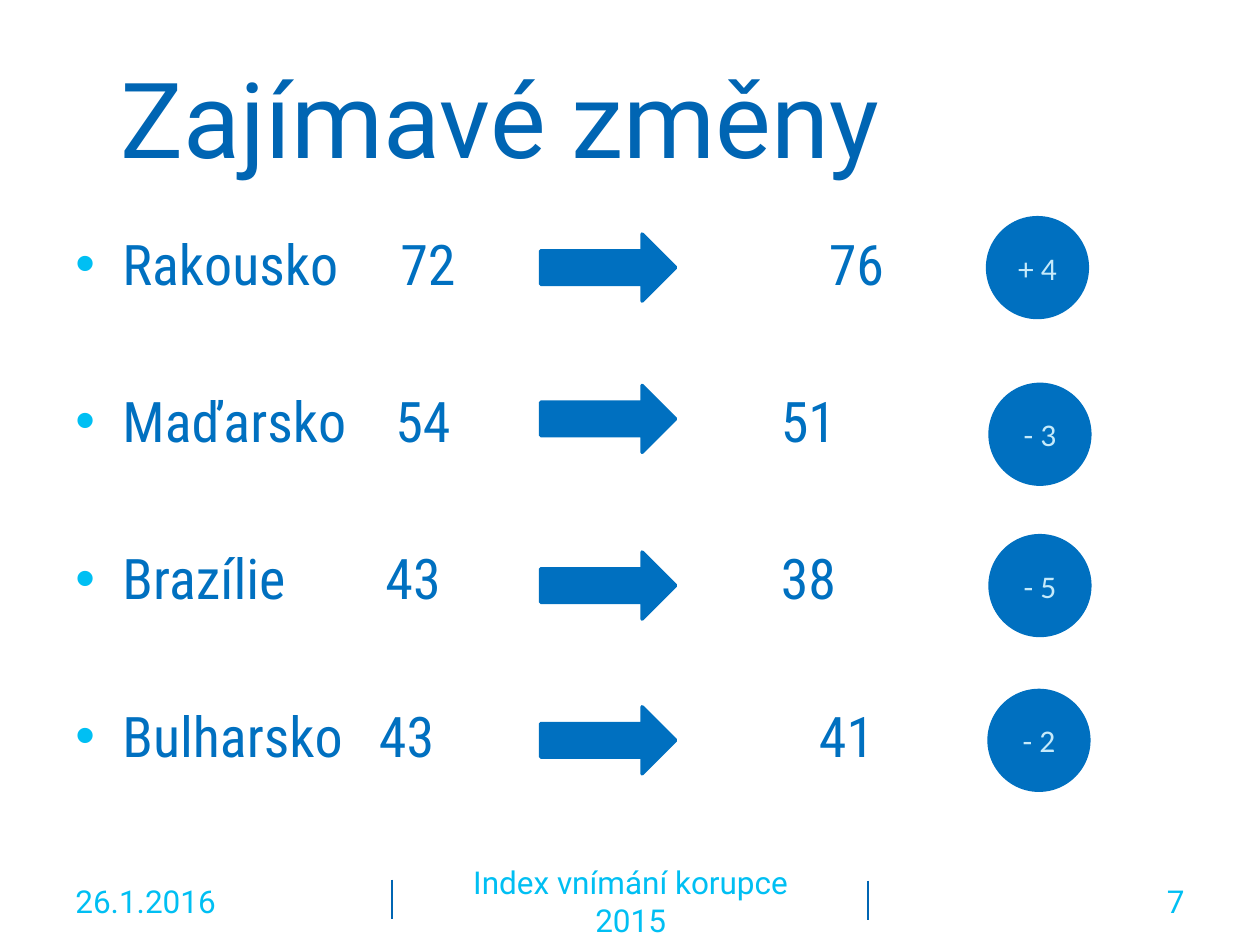
from dataclasses import dataclass

import lxml.etree
import pptx
import pptx.dml.color
import pptx.enum.shapes
import pptx.enum.text
import pptx.oxml.ns
import pptx.util

Cm = pptx.util.Cm
Pt = pptx.util.Pt
RGBColor = pptx.dml.color.RGBColor
Align = pptx.enum.text.PP_ALIGN
Anchor = pptx.enum.text.MSO_ANCHOR
Preset = pptx.enum.shapes.MSO_SHAPE
qn = pptx.oxml.ns.qn

TITLE_BLUE = RGBColor(0x00, 0x65, 0xB3)
BLUE = RGBColor(0x00, 0x70, 0xC0)
CYAN = RGBColor(0x00, 0xBF, 0xF3)
PALE_BLUE = RGBColor(0xC6, 0xEA, 0xFA)

ARROW_LEFT, ARROW_WIDTH, ARROW_HEIGHT = 10.9, 2.72, 1.35
CIRCLE_SIZE = 2.01
INDENT = 0.95
FOOTER_TOP, FOOTER_HEIGHT = 17.65, 1.02


@dataclass
class CountryChange:
    country: str
    before: str
    after: str
    difference: str
    before_tab: float
    after_tab: float
    arrow_top: float
    circle_left: float
    circle_top: float


@dataclass
class FooterItem:
    text: str
    left: float
    width: float
    alignment: Align


CHANGES = [
    CountryChange("Rakousko", "72", "76", "+ 4", 6.55, 15.19, 4.72, 19.91, 4.39),
    CountryChange("Maďarsko", "54", "51", "- 3", 6.45, 14.22, 7.77, 19.96, 7.75),
    CountryChange("Brazílie", "43", "38", "- 5", 6.25, 14.22, 11.13, 19.96, 10.8),
    CountryChange("Bulharsko", "43", "41", "- 2", 6.12, 14.99, 14.25, 19.94, 13.92),
]
FOOTER = [
    FooterItem("26.1.2016", 1.27, 5.92, Align.LEFT),
    FooterItem("Index vnímání korupce 2015", 8.69, 8.05, Align.CENTER),
    FooterItem("7", 18.21, 5.92, Align.RIGHT),
]
DIVIDERS = [(7.9, 17.73), (17.5, 17.75)]


def write_text(paragraph, text: str, *, size: float, font: str,
               color: RGBColor, alignment: Align = Align.LEFT) -> None:
    paragraph.alignment = alignment
    run = paragraph.add_run()
    run.text = text
    run.font.size = Pt(size)
    run.font.name = font
    run.font.color.rgb = color


def add_text_frame(slide, left: float, top: float, width: float, height: float,
                   anchor: Anchor = Anchor.MIDDLE):
    box = slide.shapes.add_textbox(Cm(left), Cm(top), Cm(width), Cm(height))
    box.text_frame.word_wrap = True
    box.text_frame.vertical_anchor = anchor
    return box.text_frame


def add_bullet_and_tabs(paragraph, tabs: list[float]) -> None:
    properties = paragraph._p.get_or_add_pPr()
    properties.set("marL", str(Cm(INDENT)))
    properties.set("indent", str(-Cm(INDENT)))
    bullet_color = lxml.etree.SubElement(properties, qn("a:buClr"))
    lxml.etree.SubElement(bullet_color, qn("a:srgbClr"), val=str(CYAN))
    lxml.etree.SubElement(properties, qn("a:buFont"), typeface="Arial")
    lxml.etree.SubElement(properties, qn("a:buChar"), char="•")
    tab_list = lxml.etree.SubElement(properties, qn("a:tabLst"))
    for position in tabs:
        lxml.etree.SubElement(tab_list, qn("a:tab"), pos=str(Cm(position)), algn="l")


def add_blue_shape(slide, preset: Preset, left: float, top: float,
                   width: float, height: float):
    shape = slide.shapes.add_shape(preset, Cm(left), Cm(top), Cm(width), Cm(height))
    shape.shadow.inherit = False
    shape.fill.solid()
    shape.fill.fore_color.rgb = BLUE
    shape.line.color.rgb = BLUE
    shape.line.width = Pt(2)
    lxml.etree.SubElement(shape.line._get_or_add_ln(), qn("a:round"))
    return shape


def add_divider(slide, left: float, top: float) -> None:
    connector = slide.shapes.add_connector(
        pptx.enum.shapes.MSO_CONNECTOR.STRAIGHT,
        Cm(left), Cm(top), Cm(left), Cm(top + 0.79))
    connector.line.color.rgb = TITLE_BLUE
    connector.line.width = Pt(1.5)
    lxml.etree.SubElement(connector._element.spPr, qn("a:effectLst"))


def add_change_list(slide, changes: list[CountryChange]) -> None:
    frame = add_text_frame(slide, 1.27, 4.52, 22.86, 12.5, Anchor.TOP)
    for index, change in enumerate(changes):
        paragraph = frame.add_paragraph() if index else frame.paragraphs[0]
        add_bullet_and_tabs(paragraph, [change.before_tab, change.after_tab])
        paragraph.line_spacing = Pt(38)
        if index:
            paragraph.space_before = Pt(51.8)
        write_text(paragraph, f"{change.country}\t{change.before}\t{change.after}",
                   size=32, font="Roboto Condensed", color=BLUE)


def add_change_marks(slide, change: CountryChange) -> None:
    add_blue_shape(slide, Preset.RIGHT_ARROW, ARROW_LEFT, change.arrow_top,
                   ARROW_WIDTH, ARROW_HEIGHT)
    circle = add_blue_shape(slide, Preset.OVAL, change.circle_left,
                            change.circle_top, CIRCLE_SIZE, CIRCLE_SIZE)
    circle.text_frame.word_wrap = False
    circle.text_frame.vertical_anchor = Anchor.MIDDLE
    write_text(circle.text_frame.paragraphs[0], change.difference, size=18,
               font="Calibri", color=PALE_BLUE, alignment=Align.CENTER)


def main() -> None:
    presentation = pptx.Presentation()
    presentation.slide_width = Cm(25.4)
    presentation.slide_height = Cm(19.05)
    slide = presentation.slides.add_slide(presentation.slide_layouts[6])

    for left, top in DIVIDERS:
        add_divider(slide, left, top)

    title = add_text_frame(slide, 1.27, 0.76, 17.63, 3.18)
    write_text(title.paragraphs[0], "Zajímavé změny", size=60, font="Roboto",
               color=TITLE_BLUE, alignment=Align.CENTER)

    add_change_list(slide, CHANGES)
    for change in CHANGES:
        add_change_marks(slide, change)

    for item in FOOTER:
        frame = add_text_frame(slide, item.left, FOOTER_TOP, item.width, FOOTER_HEIGHT)
        write_text(frame.paragraphs[0], item.text, size=18, font="Roboto",
                   color=CYAN, alignment=item.alignment)

    presentation.save("out.pptx")


if __name__ == "__main__":
    main()
